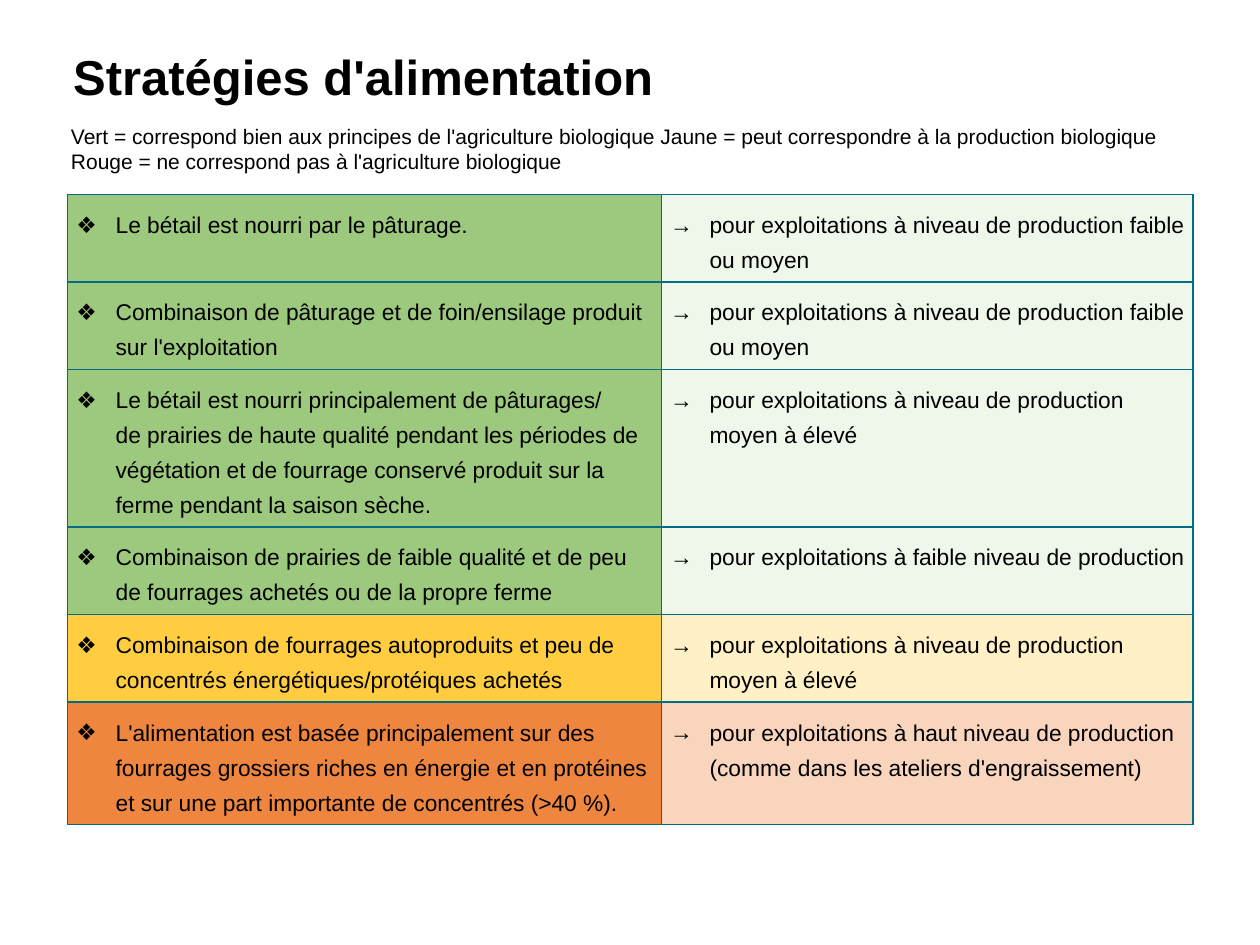
import pptx
import pptx.dml.color
import pptx.enum.text
import pptx.oxml
import pptx.oxml.ns
import pptx.util
from lxml import etree

Pt = pptx.util.Pt
RGBColor = pptx.dml.color.RGBColor

BLACK = RGBColor(0x00, 0x00, 0x00)
BORDER = RGBColor(0x00, 0x6C, 0x86)
GREEN = RGBColor(0x9C, 0xC9, 0x7D)
PALE_GREEN = RGBColor(0xEF, 0xF6, 0xEA)
YELLOW = RGBColor(0xFF, 0xCD, 0x3F)
PALE_YELLOW = RGBColor(0xFF, 0xF0, 0xC5)
ORANGE = RGBColor(0xEE, 0x86, 0x40)
PALE_ORANGE = RGBColor(0xF9, 0xD5, 0xBD)

FONT = "Arial"
LINE_SPACING = 20
CELL_MARGIN = 5
HANGING_INDENT = 22.5

LEGEND = [
    "Vert = correspond bien aux principes de l'agriculture biologique "
    "Jaune = peut correspondre à la production biologique",
    "Rouge = ne correspond pas à l'agriculture biologique",
]

# Strategy, suitable farms, number of text lines, fills of the two cells
STRATEGIES = [
    ("Le bétail est nourri par le pâturage.",
     "pour exploitations à niveau de production faible ou moyen",
     2, (GREEN, PALE_GREEN)),
    ("Combinaison de pâturage et de foin/ensilage produit\nsur l'exploitation",
     "pour exploitations à niveau de production faible ou moyen",
     2, (GREEN, PALE_GREEN)),
    ("Le bétail est nourri principalement de pâturages/\n"
     "de prairies de haute qualité pendant les périodes de végétation et de "
     "fourrage conservé produit sur la ferme pendant la saison sèche.",
     "pour exploitations à niveau de production moyen à élevé",
     4, (GREEN, PALE_GREEN)),
    ("Combinaison de prairies de faible qualité et de peu de fourrages "
     "achetés ou de la propre ferme",
     "pour exploitations à faible niveau de production",
     2, (GREEN, PALE_GREEN)),
    ("Combinaison de fourrages autoproduits et peu de concentrés "
     "énergétiques/protéiques achetés",
     "pour exploitations à niveau de production moyen à élevé",
     2, (YELLOW, PALE_YELLOW)),
    ("L'alimentation est basée principalement sur des fourrages grossiers "
     "riches en énergie et en protéines et sur une part importante de "
     "concentrés (>40 %).",
     "pour exploitations à haut niveau de production "
     "(comme dans les ateliers d'engraissement)",
     3, (ORANGE, PALE_ORANGE)),
]


def style_font(paragraph, size, bold=False):
    font = paragraph.font
    font.name = FONT
    font.size = Pt(size)
    font.bold = bold
    font.color.rgb = BLACK


def add_title(slide, left, top, width, height):
    shape = slide.shapes.add_textbox(Pt(left), Pt(top), Pt(width), Pt(height))
    frame = shape.text_frame
    frame.word_wrap = True
    frame.vertical_anchor = pptx.enum.text.MSO_ANCHOR.MIDDLE
    frame.margin_left = frame.margin_top = 0
    paragraph = frame.paragraphs[0]
    paragraph.text = "Stratégies d'alimentation"
    style_font(paragraph, 28, bold=True)


def add_legend(slide, left, top, width, height):
    shape = slide.shapes.add_textbox(Pt(left), Pt(top), Pt(width), Pt(height))
    frame = shape.text_frame
    frame.word_wrap = True
    frame.text = "\n".join(LEGEND)
    for paragraph in frame.paragraphs:
        style_font(paragraph, 12)


def add_bullet(paragraph, character):
    properties = paragraph._p.get_or_add_pPr()
    properties.set("marL", str(Pt(HANGING_INDENT)))
    properties.set("indent", str(-Pt(HANGING_INDENT)))
    bullet_font = etree.SubElement(properties, pptx.oxml.ns.qn("a:buFont"))
    bullet_font.set("typeface", FONT)
    bullet = etree.SubElement(properties, pptx.oxml.ns.qn("a:buChar"))
    bullet.set("char", character)


def add_borders(cell):
    properties = cell._tc.get_or_add_tcPr()
    for side in ("L", "R", "T", "B"):
        properties.append(pptx.oxml.parse_xml(
            f'<a:ln{side} {pptx.oxml.ns.nsdecls("a")} w="{Pt(1)}">'
            f'<a:solidFill><a:srgbClr val="{BORDER}"/></a:solidFill></a:ln{side}>'))


def fill_cell(cell, text, bullet, color):
    add_borders(cell)
    cell.fill.solid()
    cell.fill.fore_color.rgb = color
    cell.margin_left = cell.margin_right = Pt(CELL_MARGIN)
    cell.margin_top = cell.margin_bottom = Pt(CELL_MARGIN)
    paragraph = cell.text_frame.paragraphs[0]
    paragraph.text = text.replace("\n", "\v")
    add_bullet(paragraph, bullet)
    paragraph.line_spacing = Pt(LINE_SPACING)
    paragraph.space_after = Pt(6)
    style_font(paragraph, 13)


def add_strategy_table(slide, left, top, column_widths):
    """Each row is as high as its text lines plus the cell margins."""
    heights = [lines * LINE_SPACING + 2 * CELL_MARGIN
               for _, _, lines, _ in STRATEGIES]
    table = slide.shapes.add_table(
        len(STRATEGIES), len(column_widths), Pt(left), Pt(top),
        Pt(sum(column_widths)), Pt(sum(heights))).table
    table.first_row = table.horz_banding = False
    for column, width in zip(table.columns, column_widths):
        column.width = Pt(width)
    for row, height, (strategy, farms, _, colors) in zip(
            table.rows, heights, STRATEGIES):
        row.height = Pt(height)
        for cell, text, bullet, color in zip(
                row.cells, (strategy, farms), "❖→", colors):
            fill_cell(cell, text, bullet, color)


def main():
    presentation = pptx.Presentation()
    presentation.slide_width = Pt(720)
    presentation.slide_height = Pt(540)
    slide = presentation.slides.add_slide(presentation.slide_layouts[6])
    add_title(slide, 41.8, 18, 649.4, 54.7)
    add_strategy_table(slide, 38.6, 111, (339.4, 303.6))
    add_legend(slide, 33.5, 67, 643, 51)
    presentation.save("out.pptx")


if __name__ == "__main__":
    main()
